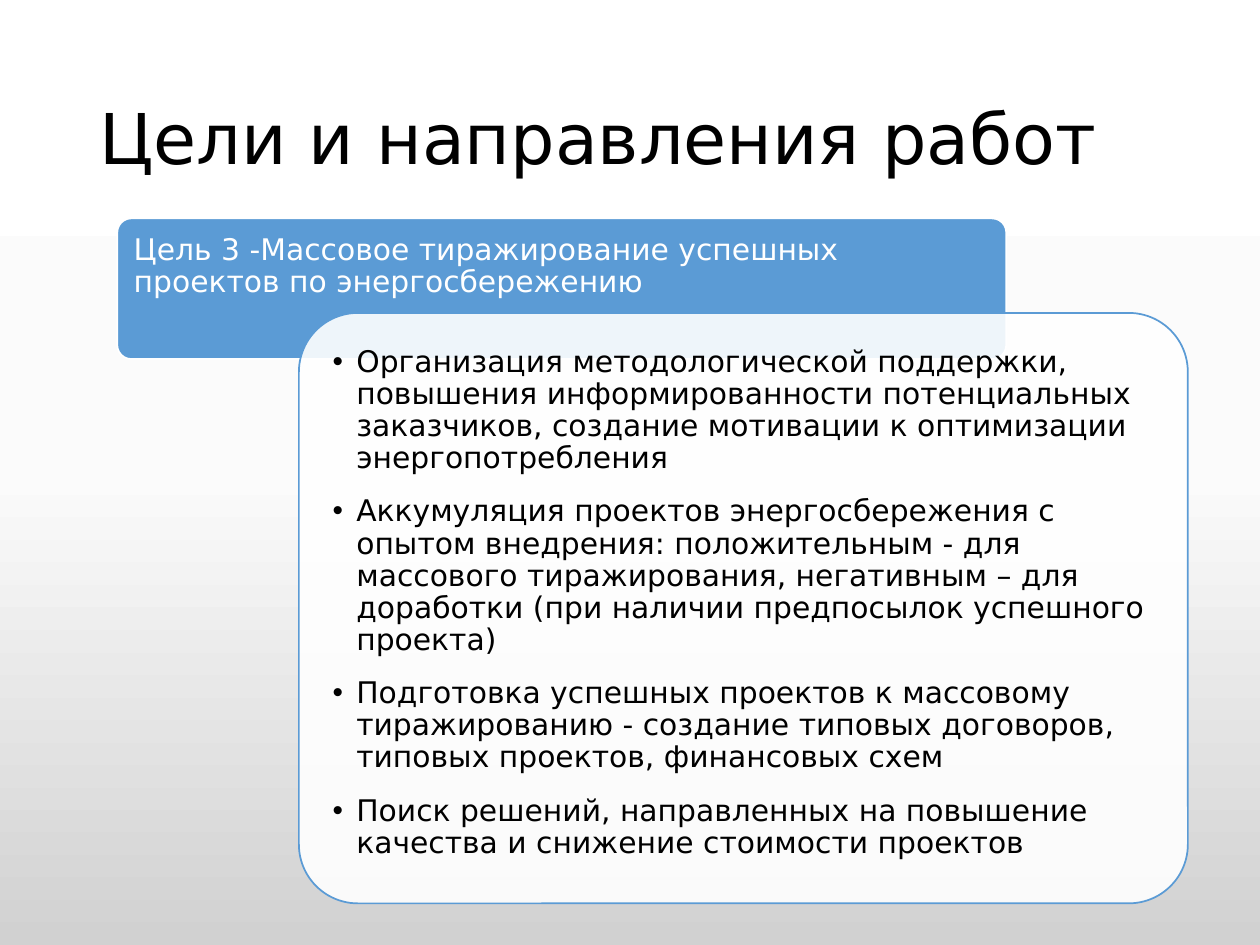
from lxml.etree import SubElement
from pptx import Presentation
from pptx.dml.color import RGBColor
from pptx.enum.shapes import MSO_SHAPE
from pptx.enum.text import MSO_ANCHOR, MSO_AUTO_SIZE, PP_ALIGN
from pptx.oxml.ns import qn
from pptx.util import Pt

COLORS = {"text": "000000", "white": "FFFFFF", "accent": "5B9BD5",
          "middle": "FBFBFB", "bottom": "D1D1D1"}

DIRECTIONS = [
    "Организация методологической поддержки, повышения информированности "
    "потенциальных заказчиков, создание мотивации к оптимизации энергопотребления",
    "Аккумуляция проектов энергосбережения с опытом внедрения: положительным - "
    "для массового тиражирования, негативным – для доработки (при наличии "
    "предпосылок успешного проекта)",
    "Подготовка успешных проектов к массовому тиражированию - создание типовых "
    "договоров, типовых проектов, финансовых схем",
    "Поиск решений, направленных на повышение качества и снижение стоимости проектов",
]


class GoalSlide:
    font = "DejaVu Sans"
    title_size = 40
    text_size = 17
    inset = 9.4

    def __init__(self, deck):
        self.slide = deck.slides.add_slide(deck.slide_layouts[1])

    def color(self, name):
        return RGBColor.from_string(COLORS[name])

    def place(self, shape, box):
        shape.left, shape.top, shape.width, shape.height = map(Pt, box)

    def background(self, stops):
        fill = self.slide.background.fill
        fill.gradient()
        fill.gradient_angle = 270
        stop_list = next(self.slide.element.iter(qn("a:gsLst")))
        for default_stop in list(stop_list):
            stop_list.remove(default_stop)
        for percent, name in stops:
            stop = SubElement(stop_list, qn("a:gs"), pos=str(percent * 1000))
            SubElement(stop, qn("a:srgbClr"), val=COLORS[name])

    def style(self, frame, size, color):
        frame.word_wrap = True
        frame.auto_size = MSO_AUTO_SIZE.NONE
        for paragraph in frame.paragraphs:
            paragraph.alignment = PP_ALIGN.LEFT
            paragraph.line_spacing = 0.9
            paragraph.space_before = Pt(0)
            for run in paragraph.runs:
                run.font.name = self.font
                run.font.size = Pt(size)
                run.font.color.rgb = self.color(color)

    def set_insets(self, frame):
        frame.margin_left = frame.margin_right = Pt(self.inset)
        frame.margin_top = frame.margin_bottom = Pt(self.inset)
        frame.vertical_anchor = MSO_ANCHOR.TOP

    def title(self, text, box):
        heading = self.slide.shapes.title
        self.place(heading, box)
        heading.text_frame.text = text
        heading.text_frame.vertical_anchor = MSO_ANCHOR.MIDDLE
        self.style(heading.text_frame, self.title_size, "text")

    def card(self, box, fill, line, opacity=100):
        card = self.slide.shapes.add_shape(MSO_SHAPE.ROUNDED_RECTANGLE, *map(Pt, box))
        card.adjustments[0] = 0.1
        card.shadow.inherit = False
        card.fill.solid()
        card.fill.fore_color.rgb = self.color(fill)
        card.line.color.rgb = self.color(line)
        card.line.width = Pt(1)
        if opacity < 100:
            fill_color = card.element.spPr.find(qn("a:solidFill"))[0]
            SubElement(fill_color, qn("a:alpha"), val=str(opacity * 1000))

    def label(self, text, box, color):
        frame = self.slide.shapes.add_textbox(*map(Pt, box)).text_frame
        frame.text = text
        self.set_insets(frame)
        self.style(frame, self.text_size, color)

    def bullets(self, items, box):
        body = self.slide.placeholders[1]
        self.place(body, box)
        frame = body.text_frame
        frame.text = "\n".join(items)
        self.set_insets(frame)
        self.style(frame, self.text_size, "text")
        indent = Pt(13.5)
        for paragraph in frame.paragraphs:
            paragraph.space_after = Pt(12)
            properties = paragraph._p.get_or_add_pPr()
            properties.set("marL", str(indent))
            properties.set("indent", str(-indent))
            SubElement(properties, qn("a:buChar"), char="•")
        # Bring the list in front of its card
        body.element.getparent().append(body.element)


def main():
    deck = Presentation()
    deck.slide_width, deck.slide_height = Pt(720), Pt(540)
    goal = GoalSlide(deck)

    # Background and title
    goal.background([(0, "white"), (50, "middle"), (100, "bottom")])
    goal.title("Цели и направления работ", (49.5, 28.8, 621, 104.4))

    # Goal header
    goal.card((67, 124.8, 508, 80.4), "accent", "white")
    goal.label("Цель 3 -Массовое тиражирование успешных проектов по энергосбережению",
               (67, 124.8, 508, 54), "white")

    # Directions of work
    goal.card((170.8, 178.8, 508, 337.4), "white", "accent", opacity=90)
    goal.bullets(DIRECTIONS, (180.7, 188.7, 488.2, 317.6))

    deck.save("out.pptx")


if __name__ == "__main__":
    main()
